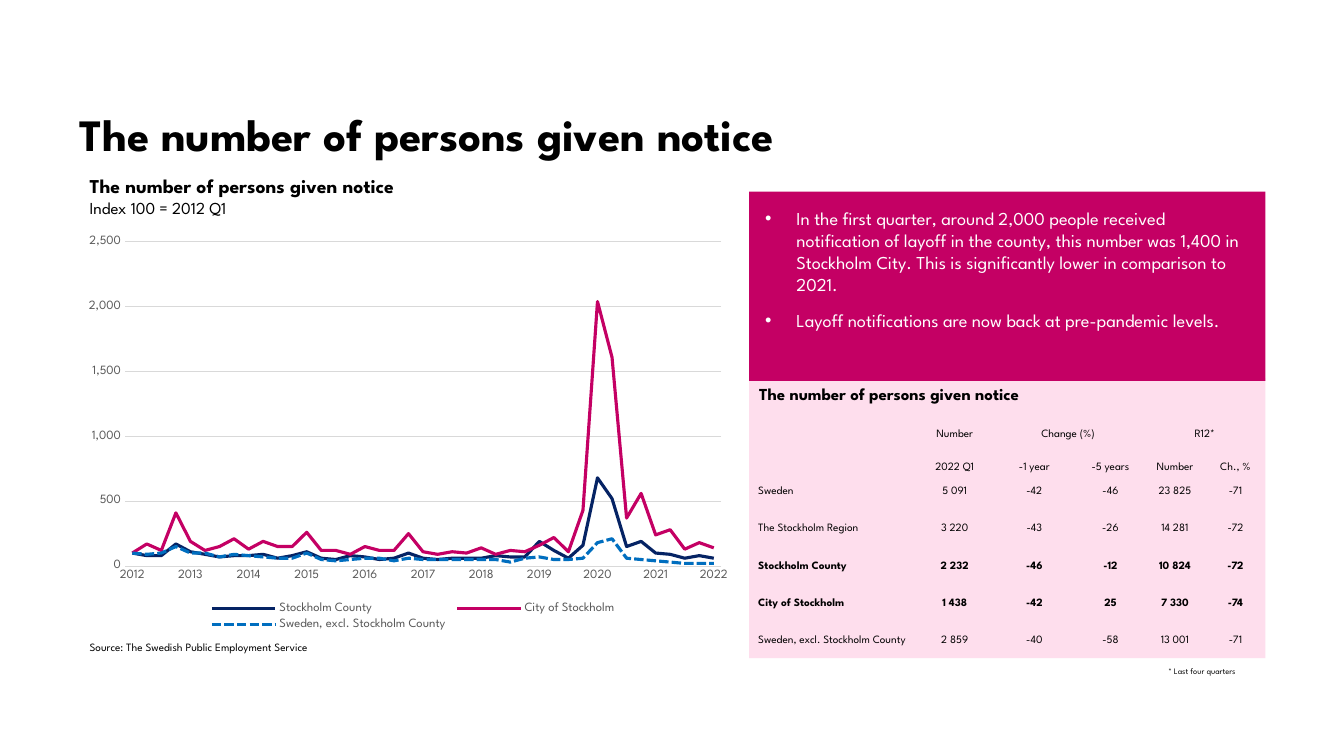
from lxml.etree import SubElement
from pptx import Presentation
from pptx.chart.data import CategoryChartData
from pptx.dml.color import RGBColor
from pptx.enum.chart import XL_CHART_TYPE, XL_LEGEND_POSITION, XL_TICK_MARK
from pptx.enum.dml import MSO_LINE
from pptx.enum.shapes import MSO_SHAPE
from pptx.enum.text import MSO_ANCHOR, PP_ALIGN
from pptx.oxml import parse_xml
from pptx.oxml.ns import nsdecls, qn
from pptx.util import Inches, Pt

FONT = "League Spartan"
COLORS = {
    "black": "000000", "white": "FFFFFF", "grey": "595959", "grid": "D9D9D9",
    "navy": "052364", "magenta": "C40064", "blue": "006EBF", "pink": "FEDEED",
}
HEADING = "The number of persons given notice"
NO_STYLE = "{2D5ABB26-0587-4C30-8999-92F81FD0307C}"

BULLETS = [
    "In the first quarter, around 2,000 people received notification of layoff "
    "in the county, this number was 1,400 in Stockholm City. This is "
    "significantly lower in comparison to 2021.",
    "Layoff notifications are now back at pre-pandemic levels.",
]
COLUMNS = [1.67, 0.74, 0.84, 0.67, 0.61, 0.59]
ROWS = [0.31, 0.32] + [0.37] * 5
BOLD_ROWS = (4, 5)
CELLS = [
    ["", "Number", "Change (%)", "", "R12*", ""],
    ["", "2022 Q1", "-1 year", "-5 years", "Number", "Ch., %"],
    ["Sweden", "5 091", "-42", "-46", "23 825", "-71"],
    ["The Stockholm Region", "3 220", "-43", "-26", "14 281", "-72"],
    ["Stockholm County", "2 232", "-46", "-12", "10 824", "-72"],
    ["City of Stockholm", "1 438", "-42", "25", "7 330", "-74"],
    ["Sweden, excl. Stockholm County", "2 859", "-40", "-58", "13 001", "-71"],
]
SERIES = [
    ("Stockholm County", "navy", MSO_LINE.SOLID,
     [100, 80, 80, 170, 110, 90, 70, 80, 80, 90, 60, 80, 110, 60, 50, 80, 70,
      50, 60, 100, 60, 50, 60, 60, 60, 80, 70, 70, 190, 120, 60, 160, 680, 520,
      150, 190, 100, 90, 60, 80, 60]),
    ("City of Stockholm", "magenta", MSO_LINE.SOLID,
     [100, 170, 120, 410, 190, 120, 150, 210, 130, 190, 150, 150, 260, 120,
      120, 90, 150, 120, 120, 250, 110, 90, 110, 100, 140, 90, 120, 110, 160,
      220, 110, 430, 2040, 1610, 370, 560, 240, 280, 130, 180, 140]),
    ("Sweden, excl. Stockholm County", "blue", MSO_LINE.SQUARE_DOT,
     [100, 90, 100, 150, 100, 100, 70, 90, 80, 70, 60, 60, 100, 50, 40, 50, 60,
      60, 40, 60, 50, 50, 50, 50, 50, 50, 30, 60, 70, 50, 50, 60, 180, 210, 60,
      50, 40, 30, 20, 20, 20]),
]


def rgb(name):
    return RGBColor.from_string(COLORS[name])


def style(font, size, color="black", bold=False):
    for key, value in {"name": FONT, "size": Pt(size), "bold": bold}.items():
        setattr(font, key, value)
    font.color.rgb = rgb(color)


def add_run(p, text, size, color="black", bold=False):
    r = p.add_run()
    r.text = text
    style(r.font, size, color, bold)


def add_label(s, x, y, w, h, lines):
    tf = s.shapes.add_textbox(*map(Inches, (x, y, w, h))).text_frame
    tf.word_wrap = False
    p = tf.paragraphs[0]
    for i, (text, size, bold) in enumerate(lines):
        if i:
            p.add_line_break()
        add_run(p, text, size, bold=bold)


def add_panel(s, x, y, w, h, color):
    sp = s.shapes.add_shape(MSO_SHAPE.RECTANGLE, *map(Inches, (x, y, w, h)))
    sp.shadow.inherit = False
    sp.fill.solid()
    sp.fill.fore_color.rgb = rgb(color)
    sp.line.fill.background()
    return sp


def add_title(s, x, y, w, h):
    sp = s.shapes.title
    box = {"left": x, "top": y, "width": w, "height": h}
    for key, value in box.items():
        setattr(sp, key, Inches(value))
    tf = sp.text_frame
    frame = {"margin_left": 0, "margin_right": 0, "margin_top": 0,
             "margin_bottom": 0, "vertical_anchor": MSO_ANCHOR.BOTTOM,
             "word_wrap": True}
    for key, value in frame.items():
        setattr(tf, key, value)
    tf.paragraphs[0].alignment = PP_ALIGN.LEFT
    add_run(tf.paragraphs[0], HEADING, 32, bold=True)


def add_message(s, x, y, w, h):
    tf = add_panel(s, x, y, w, h, "magenta").text_frame
    tf.word_wrap = True
    tf.vertical_anchor = MSO_ANCHOR.TOP
    for side in ("left", "right", "top", "bottom"):
        setattr(tf, f"margin_{side}", Inches(0.16))
    for i, text in enumerate(BULLETS):
        p = tf.add_paragraph() if i else tf.paragraphs[0]
        p.alignment = PP_ALIGN.LEFT
        if i:
            p.space_before = Pt(10)
        pPr = p._p.get_or_add_pPr()
        pPr.set("marL", str(Inches(0.31)))
        pPr.set("indent", str(-Inches(0.31)))
        SubElement(pPr, qn("a:buFont")).set("typeface", "Arial")
        SubElement(pPr, qn("a:buChar")).set("char", "•")
        add_run(p, text, 13, "white")


def add_figures(s, x, y, w, h):
    add_panel(s, x, y, w, h, "pink")
    add_label(s, x, y + 0.01, 3.1, 0.3, [(HEADING, 12, True)])
    frame = s.shapes.add_table(len(ROWS), len(COLUMNS), Inches(x),
                               Inches(y + 0.31), Inches(w), Inches(sum(ROWS)))
    table = frame.table
    table.first_row = table.horz_banding = False
    table._tbl.tblPr.find(qn("a:tableStyleId")).text = NO_STYLE
    for column, width in zip(table.columns, COLUMNS):
        column.width = Inches(width)
    for i, (row, height) in enumerate(zip(table.rows, ROWS)):
        row.height = Inches(height)
        for j, cell in enumerate(row.cells):
            anchor = MSO_ANCHOR.BOTTOM if i < 2 else MSO_ANCHOR.MIDDLE
            layout = {"margin_left": Inches(0.01 if j else 0.09),
                      "margin_right": Inches(0.01), "margin_top": Inches(0.01),
                      "margin_bottom": 0, "vertical_anchor": anchor}
            for key, value in layout.items():
                setattr(cell, key, value)
            cell.fill.background()
            p = cell.text_frame.paragraphs[0]
            p.alignment = PP_ALIGN.CENTER if j else PP_ALIGN.LEFT
            add_run(p, CELLS[i][j], 8, bold=i in BOLD_ROWS)
    for j in (2, 4):
        table.cell(0, j).merge(table.cell(0, j + 1))
    add_label(s, x + 4.06, y + h + 0.03, 0.96, 0.2,
              [("* Last four quarters", 6, False)])


def manual_layout(x, y, w, h, inner=False):
    target = '<c:layoutTarget val="inner"/>' if inner else ""
    return parse_xml(
        f'<c:layout {nsdecls("c")}><c:manualLayout>{target}'
        '<c:xMode val="edge"/><c:yMode val="edge"/>'
        f'<c:x val="{x}"/><c:y val="{y}"/><c:w val="{w}"/><c:h val="{h}"/>'
        '</c:manualLayout></c:layout>')


def add_notice_chart(s, x, y, w, h):
    data = CategoryChartData(number_format="#,##0")
    data.categories = ["" if q % 4 else str(2012 + q // 4) for q in range(41)]
    for name, _, _, values in SERIES:
        data.add_series(name, values)
    chart = s.shapes.add_chart(XL_CHART_TYPE.LINE, *map(Inches, (x, y, w, h)),
                               data).chart
    style(chart.font, 10)
    chart.has_title = False
    chart.plots[0].vary_by_categories = False
    for ser, (_, color, dash, _) in zip(chart.plots[0].series, SERIES):
        ser.smooth = False
        line = ser.format.line
        line.width = Pt(2.25)
        line.color.rgb = rgb(color)
        line.dash_style = dash
    cat, val = chart.category_axis, chart.value_axis
    for axis in (cat, val):
        axis.major_tick_mark = axis.minor_tick_mark = XL_TICK_MARK.NONE
        style(axis.tick_labels.font, 9, "grey")
    val.minimum_scale, val.maximum_scale, val.major_unit = 0, 2500, 500
    val.tick_labels.number_format = "#,##0"
    val.tick_labels.number_format_is_linked = False
    val.format.line.fill.background()
    for line in (cat.format.line, val.major_gridlines.format.line):
        line.color.rgb = rgb("grid")
        line.width = Pt(0.75)
    body = cat._element.find(qn("c:txPr")).find(qn("a:bodyPr"))
    body.set("rot", "-60000000")
    body.set("vert", "horz")
    cat._element.find(qn("c:noMultiLvlLbl")).addprevious(
        parse_xml(f'<c:tickLblSkip {nsdecls("c")} val="4"/>'))
    chart.has_legend = True
    legend = chart.legend
    legend.position = XL_LEGEND_POSITION.BOTTOM
    legend.include_in_layout = False
    style(legend.font, 9, "grey")
    plot_area = chart._chartSpace.chart.plotArea
    for parent, index, layout in (
            (plot_area, 0, manual_layout(0.07, 0.03, 0.9, 0.8, True)),
            (legend._element, 1, manual_layout(0.19, 0.91, 0.63, 0.09))):
        for old in parent.findall(qn("c:layout")):
            parent.remove(old)
        parent.insert(index, layout)


def main():
    prs = Presentation()
    prs.slide_width, prs.slide_height = Inches(13.33), Inches(7.5)
    s = prs.slides.add_slide(prs.slide_layouts[5])
    add_title(s, 0.79, 0.37, 9.22, 1.22)
    add_label(s, 0.79, 6.3, 2.8, 0.24,
              [("Source: The Swedish Public Employment Service", 8, False)])
    add_figures(s, 7.43, 3.75, 5.12, 2.78)
    add_message(s, 7.43, 1.9, 5.12, 1.88)
    add_label(s, 0.79, 1.68, 3.59, 0.54,
              [(HEADING, 14, True), ("Index 100 = 2012 Q1", 12, False)])
    add_notice_chart(s, 0.78, 2.28, 6.57, 4.02)
    prs.save("out.pptx")


if __name__ == "__main__":
    main()
